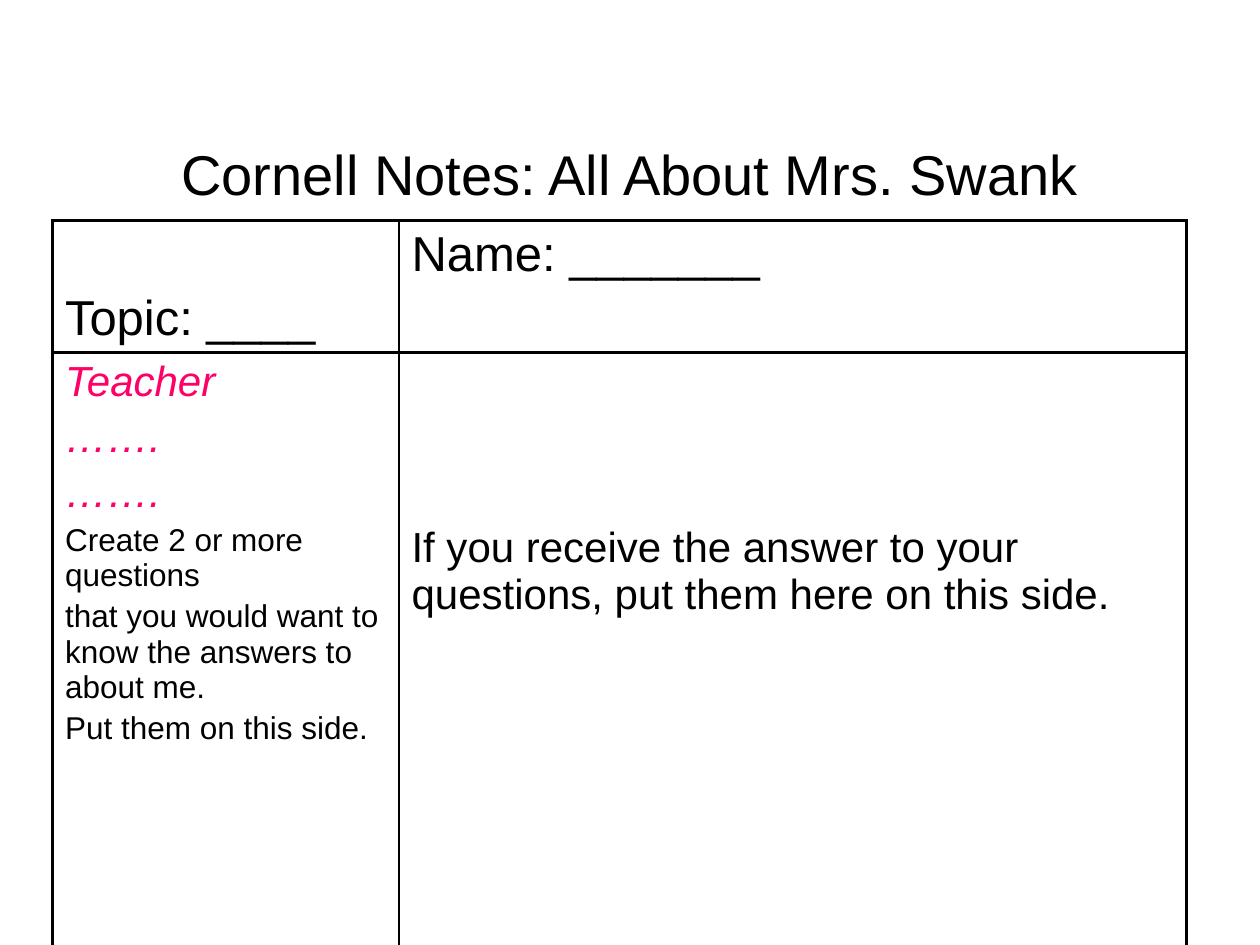
import pptx
import pptx.dml.color
import pptx.enum.text
import pptx.oxml.ns
import pptx.util
from lxml import etree

Pt = pptx.util.Pt
Anchor = pptx.enum.text.MSO_ANCHOR
BLACK = pptx.dml.color.RGBColor(0x00, 0x00, 0x00)
PINK = pptx.dml.color.RGBColor(0xFF, 0x00, 0x66)

TOPIC = {"size": Pt(28)}
TEACHER = {"size": Pt(24), "italic": True}
PROMPT = {"size": Pt(18)}
ANSWER = {"size": Pt(24)}


class NotesSlide:
    font_name = "Arial"
    outer_line = 2.25
    inner_line = 1
    space_share = 0.2

    def __init__(self, deck):
        self.slide = deck.slides.add_slide(deck.slide_layouts[5])

    def format_font(self, font, color, values):
        settings = {"name": self.font_name, "bold": False, "italic": False, **values}
        for key, value in settings.items():
            setattr(font, key, value)
        font.color.rgb = color

    def title(self, text, left, top, width, height):
        heading = self.slide.shapes.title
        box = {"left": left, "top": top, "width": width, "height": height}
        for key, value in box.items():
            setattr(heading, key, Pt(value))
        frame = heading.text_frame
        frame.text = text
        frame.auto_size = pptx.enum.text.MSO_AUTO_SIZE.NONE
        frame.vertical_anchor = Anchor.MIDDLE
        paragraph = frame.paragraphs[0]
        paragraph.alignment = pptx.enum.text.PP_ALIGN.CENTER
        self.format_font(paragraph.runs[0].font, BLACK, {"size": Pt(32)})

    def table(self, left, top, columns, rows):
        frame = self.slide.shapes.add_table(
            len(rows), len(columns), Pt(left), Pt(top),
            Pt(sum(columns)), Pt(sum(rows)))
        grid = frame.table
        grid.first_row = grid.horz_banding = False
        for column, width in zip(grid.columns, columns):
            column.width = Pt(width)
        for row, height in zip(grid.rows, rows):
            row.height = Pt(height)
            for index, cell in enumerate(row.cells):
                self.borders(cell, index == 0, index == len(columns) - 1)
                cell.fill.background()
        return grid

    def borders(self, cell, is_first, is_last):
        """Rule a cell: thin between columns, thick everywhere else."""
        widths = {
            "L": self.outer_line if is_first else self.inner_line,
            "R": self.outer_line if is_last else self.inner_line,
            "T": self.outer_line,
            "B": self.outer_line,
        }
        qn = pptx.oxml.ns.qn
        properties = cell._tc.get_or_add_tcPr()
        for side, width in widths.items():
            line = etree.SubElement(properties, qn(f"a:ln{side}"), w=str(Pt(width)))
            fill = etree.SubElement(line, qn("a:solidFill"))
            etree.SubElement(fill, qn("a:srgbClr"), val=str(BLACK))

    def cell_text(self, cell, lines, **placing):
        """Fill a cell with (text, color, font values) lines."""
        for key, value in placing.items():
            setattr(cell, key, value)
        frame = cell.text_frame
        for index, (text, color, values) in enumerate(lines):
            paragraph = frame.add_paragraph() if index else frame.paragraphs[0]
            paragraph.space_before = Pt(self.space_share * values["size"].pt)
            run = paragraph.add_run()
            run.text = text
            self.format_font(run.font, color, values)


def main():
    deck = pptx.Presentation()
    deck.slide_width, deck.slide_height = Pt(720), Pt(540)

    page = NotesSlide(deck)
    page.title("Cornell Notes: All About Mrs. Swank", 36, 54, 648, 90)

    notes = page.table(30, 126, columns=[198, 450], rows=[75.5, 400.5])
    page.cell_text(notes.cell(0, 0), [("Topic: ____", BLACK, TOPIC)],
                   vertical_anchor=Anchor.BOTTOM)
    page.cell_text(notes.cell(0, 1), [("Name: _______", BLACK, TOPIC)])
    page.cell_text(notes.cell(1, 0), [
        ("Teacher", PINK, TEACHER),
        ("…….", PINK, TEACHER),
        ("…….", PINK, TEACHER),
        ("Create 2 or more questions", BLACK, PROMPT),
        ("that you would want to know the answers to about me.", BLACK, PROMPT),
        ("Put them on this side.", BLACK, PROMPT),
    ])
    page.cell_text(notes.cell(1, 1), [
        ("If you receive the answer to your questions, put them here on this side.",
         BLACK, ANSWER),
    ], margin_top=Pt(98.5))

    deck.save("out.pptx")


if __name__ == "__main__":
    main()
